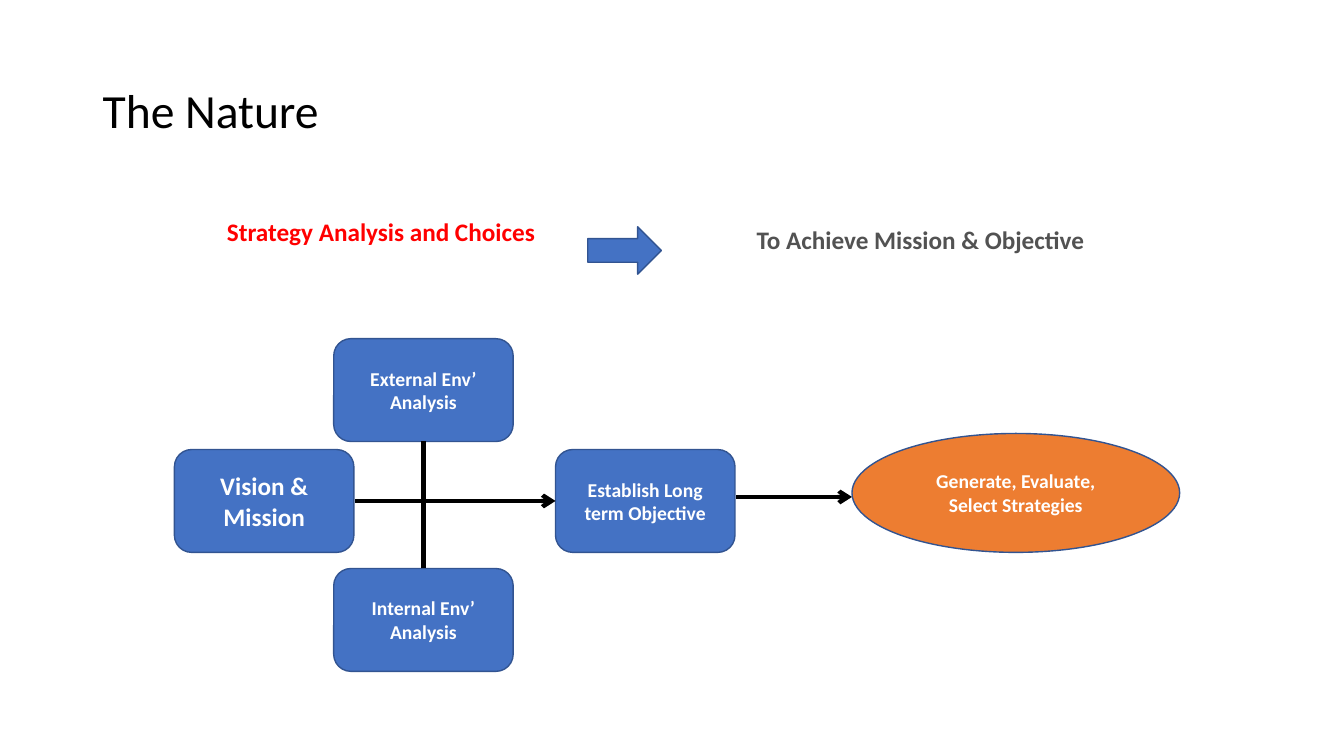
from dataclasses import dataclass

from lxml import etree
from pptx import Presentation
from pptx.dml.color import RGBColor
from pptx.enum.shapes import MSO_CONNECTOR, MSO_SHAPE
from pptx.enum.text import MSO_ANCHOR, PP_ALIGN
from pptx.oxml.ns import qn
from pptx.slide import Slide
from pptx.text.text import TextFrame
from pptx.util import Emu, Pt

ROUNDED = MSO_SHAPE.ROUNDED_RECTANGLE
ELLIPSE = MSO_SHAPE.OVAL
RIGHT_ARROW = MSO_SHAPE.RIGHT_ARROW
STRAIGHT = MSO_CONNECTOR.STRAIGHT
LEFT, CENTER = PP_ALIGN.LEFT, PP_ALIGN.CENTER
TOP, MIDDLE = MSO_ANCHOR.TOP, MSO_ANCHOR.MIDDLE

BLACK = RGBColor(0x00, 0x00, 0x00)
WHITE = RGBColor(0xFF, 0xFF, 0xFF)
RED = RGBColor(0xFF, 0x00, 0x00)
GRAY = RGBColor(0x52, 0x52, 0x52)
BLUE = RGBColor(0x44, 0x72, 0xC4)
NAVY = RGBColor(0x32, 0x54, 0x91)
ORANGE = RGBColor(0xED, 0x7D, 0x31)

FONT = "Calibri"
EMU_PER_PX = 9144
STEP_W, STEP_H = 178, 102
MAIN_Y = 446


@dataclass(frozen=True)
class Label:
    text: str
    left: int
    top: int
    width: int
    height: int
    size: int
    color: RGBColor
    bold: bool = True
    align: PP_ALIGN = CENTER
    anchor: MSO_ANCHOR = TOP
    spacing: float = 1.0


@dataclass(frozen=True)
class Step:
    text: str
    left: int
    top: int
    width: int = STEP_W
    height: int = STEP_H
    size: int = 14
    preset: MSO_SHAPE = ROUNDED
    fill: RGBColor = BLUE


@dataclass(frozen=True)
class Link:
    x1: int
    y1: int
    x2: int
    y2: int
    arrow: bool = True


LABELS = (
    Label("The Nature", 92, 40, 1150, 145, 34, BLACK, False, LEFT, MIDDLE, 0.9),
    Label("Strategy Analysis and Choices", 205, 210, 346, 40, 18, RED),
    Label("To Achieve Mission & Objective", 740, 218, 346, 40, 18, GRAY),
)
LINKS = (
    Link(352, 497, 551, 497),
    Link(420, 564, 420, 438, arrow=False),
    Link(730, 493, 845, 493),
)
STEPS = (
    Step("", 583, 225, 73, 47, preset=RIGHT_ARROW),
    Step("Vision & Mission", 173, MAIN_Y, size=18),
    Step("Internal Env’ Analysis", 331, 564),
    Step("External Env’ Analysis", 331, 336),
    Step("Establish Long term Objective", 551, MAIN_Y),
    Step("Generate, Evaluate, Select Strategies", 845, 430, 325, 118,
         preset=ELLIPSE, fill=ORANGE),
)


def px(length: int) -> Emu:
    """Turn px into EMU."""
    return Emu(length * EMU_PER_PX)


def write(frame: TextFrame, text: str, size: int, color: RGBColor, bold: bool,
          align: PP_ALIGN, anchor: MSO_ANCHOR, spacing: float = 1.0) -> None:
    """Fill a text frame with one formatted run."""
    frame.word_wrap = True
    frame.vertical_anchor = anchor
    paragraph = frame.paragraphs[0]
    paragraph.alignment = align
    paragraph.line_spacing = spacing
    run = paragraph.add_run()
    run.text = text
    run.font.name = FONT
    run.font.size = Pt(size)
    run.font.bold = bold
    run.font.color.rgb = color


def draw_label(slide: Slide, label: Label) -> None:
    """Draw a free-standing text."""
    box = slide.shapes.add_textbox(
        px(label.left), px(label.top), px(label.width), px(label.height))
    write(box.text_frame, label.text, label.size, label.color, label.bold,
          label.align, label.anchor, label.spacing)


def draw_step(slide: Slide, step: Step) -> None:
    """Draw a filled shape of the process with its wording."""
    shape = slide.shapes.add_shape(
        step.preset, px(step.left), px(step.top), px(step.width), px(step.height))
    shape.shadow.inherit = False
    shape.fill.solid()
    shape.fill.fore_color.rgb = step.fill
    shape.line.color.rgb = NAVY
    shape.line.width = Pt(1)
    if step.text:
        write(shape.text_frame, step.text, step.size, WHITE, True, CENTER, MIDDLE)


def draw_link(slide: Slide, link: Link) -> None:
    """Draw a black line, with an arrowhead where the link has one."""
    connector = slide.shapes.add_connector(
        STRAIGHT, px(link.x1), px(link.y1), px(link.x2), px(link.y2))
    connector.line.color.rgb = BLACK
    connector.line.width = Pt(3)
    properties = connector.element.spPr
    if link.arrow:
        etree.SubElement(properties.find(qn("a:ln")), qn("a:tailEnd"), type="arrow")
    etree.SubElement(properties, qn("a:effectLst"))


def main() -> None:
    """Build and save the slide."""
    presentation = Presentation()
    presentation.slide_width = px(1333)
    presentation.slide_height = px(750)
    slide = presentation.slides.add_slide(presentation.slide_layouts[6])
    for label in LABELS:
        draw_label(slide, label)
    for step in STEPS:
        draw_step(slide, step)
    for link in LINKS:
        draw_link(slide, link)
    presentation.save("out.pptx")


if __name__ == "__main__":
    main()
